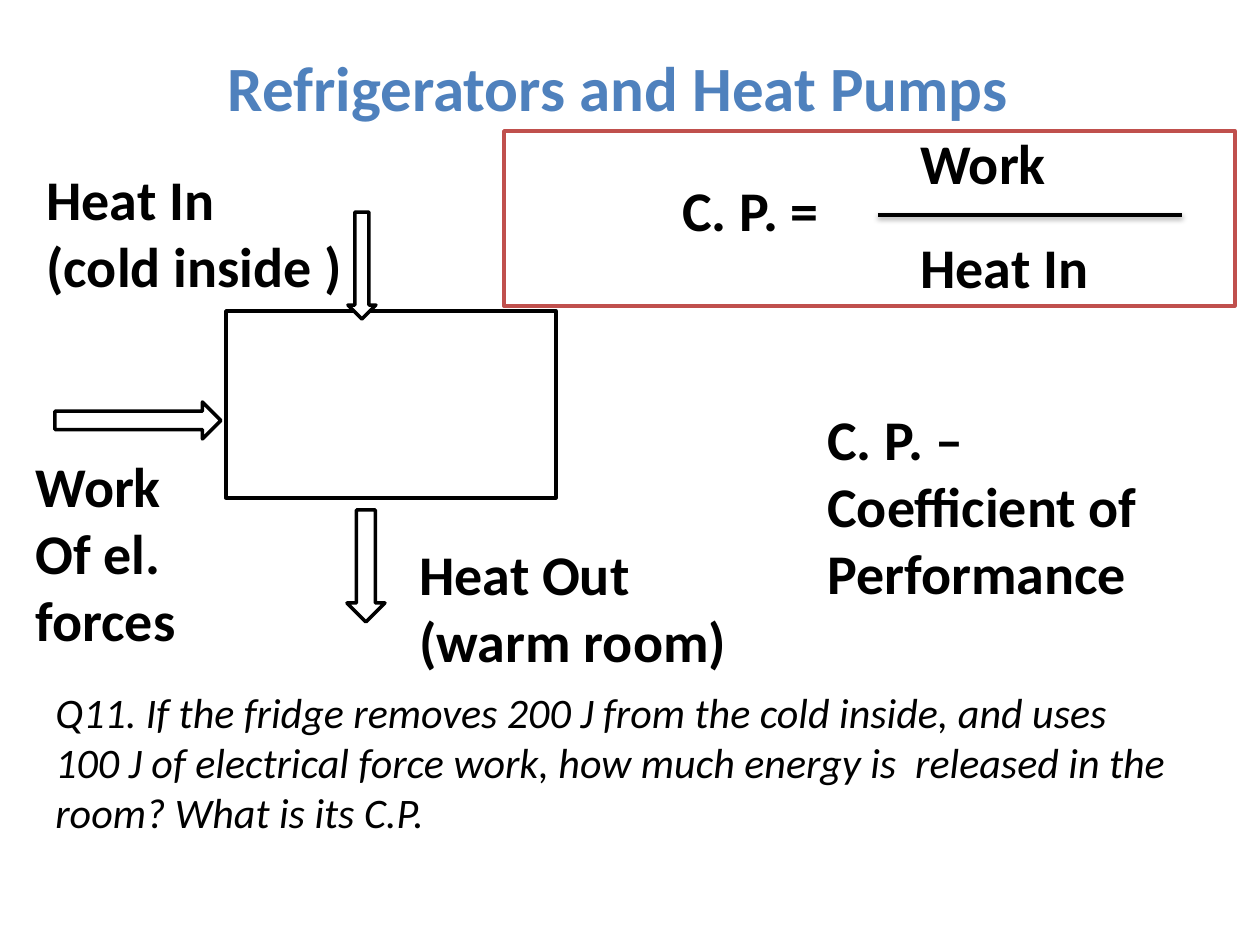
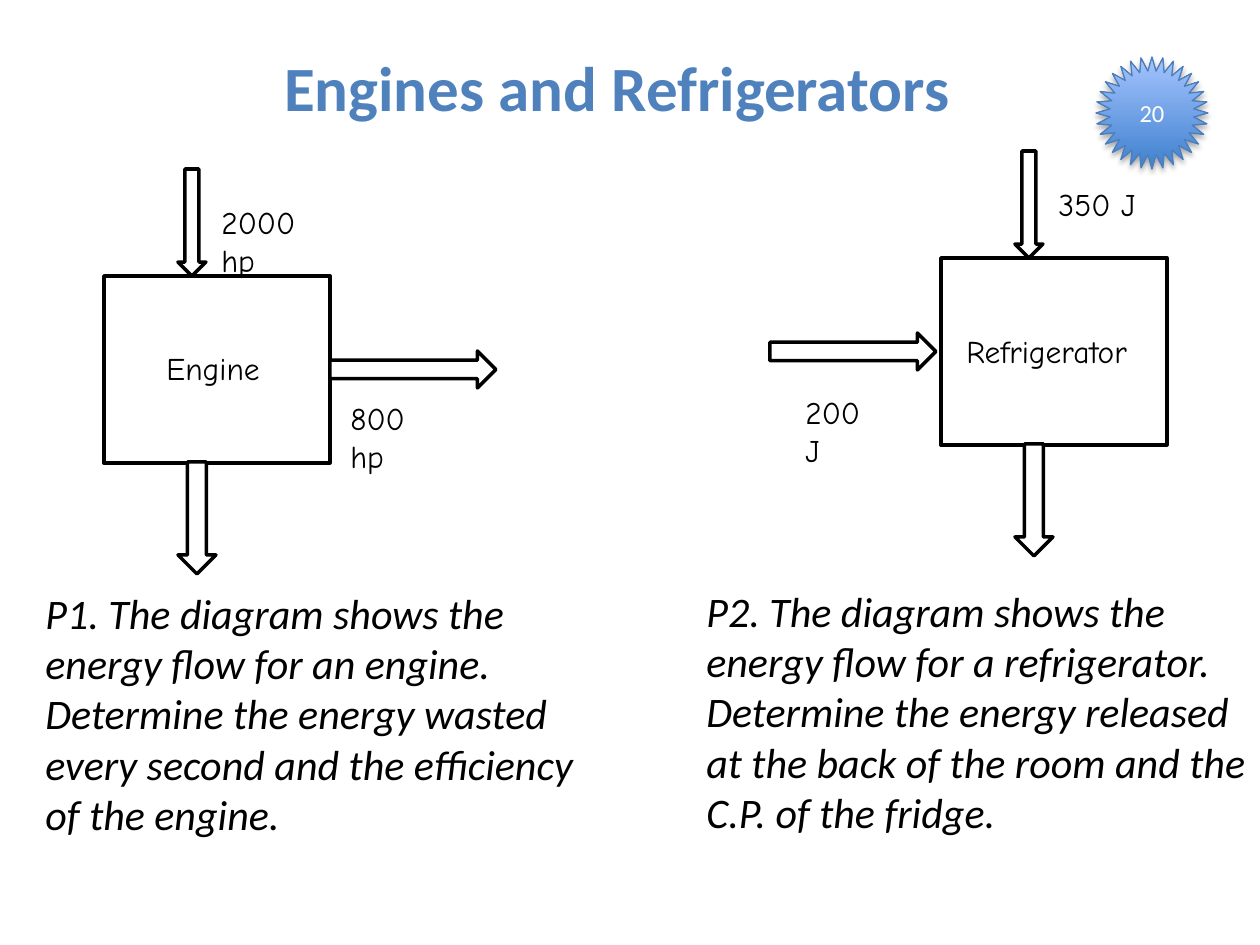
from lxml import etree
from pptx import Presentation
from pptx.dml.color import RGBColor
from pptx.enum.shapes import MSO_CONNECTOR, MSO_SHAPE
from pptx.enum.text import MSO_ANCHOR, MSO_AUTO_SIZE, PP_ALIGN
from pptx.oxml.ns import qn
from pptx.util import Emu, Pt

RECTANGLE = MSO_SHAPE.RECTANGLE
DOWN_ARROW = MSO_SHAPE.DOWN_ARROW
RIGHT_ARROW = MSO_SHAPE.RIGHT_ARROW
STAR = MSO_SHAPE.STAR_32_POINT
STRAIGHT = MSO_CONNECTOR.STRAIGHT
TOP, MIDDLE = MSO_ANCHOR.TOP, MSO_ANCHOR.MIDDLE
LEFT, CENTER = PP_ALIGN.LEFT, PP_ALIGN.CENTER
NO_AUTOFIT = MSO_AUTO_SIZE.NONE

# Shared scale, colours and fonts
EMU_PER_PX = 914400 / 126
SLIDE_W, SLIDE_H = 1260, 945
BLACK, WHITE = "000000", "FFFFFF"
TITLE_BLUE, FORMULA_RED = "4F81BD", "C0504D"
STAR_DARK, STAR_LIGHT, STAR_EDGE = "3F80CE", "A4C4FF", "4B7EBC"
BODY_FONT, DIAGRAM_FONT = "Calibri", "Comic Neue"

# Sizes of the parts of every energy-flow diagram
BOX_H = 187
HEAT_IN_SIZE, HEAT_OUT_SIZE, WORK_SIZE = (28, 107), (38, 112), (166, 37)


def px(*lengths):
    return [Emu(round(length * EMU_PER_PX)) for length in lengths]


def color(hex_string):
    return RGBColor.from_string(hex_string)


def write(frame, lines, size, font=BODY_FONT, ink=BLACK, bold=False,
          italic=False, align=LEFT, anchor=TOP, wrap=True):
    frame.word_wrap = wrap
    frame.auto_size = NO_AUTOFIT
    frame.vertical_anchor = anchor
    frame.text = lines
    for paragraph in frame.paragraphs:
        paragraph.alignment = align
        paragraph.font.name = font
        paragraph.font.size = Pt(size)
        paragraph.font.bold = bold
        paragraph.font.italic = italic
        paragraph.font.color.rgb = color(ink)


def add_text(slide, box, lines, size, **style):
    write(slide.shapes.add_textbox(*px(*box)).text_frame, lines, size, **style)


def add_label(slide, box, lines):
    add_text(slide, box, lines, 32, bold=True)


def add_question(slide, box, question):
    add_text(slide, box, question, 24, italic=True)


def add_diagram_text(slide, box, caption):
    add_text(slide, box, caption, 18, font=DIAGRAM_FONT)


def add_outlined(slide, preset, box, fill=WHITE, line=BLACK, width=2):
    shape = slide.shapes.add_shape(preset, *px(*box))
    shape.shadow.inherit = False
    if fill:
        shape.fill.solid()
        shape.fill.fore_color.rgb = color(fill)
    else:
        shape.fill.background()
    shape.line.color.rgb = color(line)
    shape.line.width = Pt(width)
    return shape


def add_drop_shadow(shape, opacity, distance):
    properties = shape._element.spPr
    effects = properties.find(qn("a:effectLst"))
    if effects is None:
        effects = etree.SubElement(properties, qn("a:effectLst"))
    shadow = etree.SubElement(
        effects, qn("a:outerShdw"), blurRad=str(Pt(3.1)),
        dist=str(Pt(distance)), dir="5400000", rotWithShape="0")
    ink = etree.SubElement(shadow, qn("a:srgbClr"), val=BLACK)
    etree.SubElement(ink, qn("a:alpha"), val=str(opacity * 1000))


def add_fraction_bar(slide, left, right, y):
    bar = slide.shapes.add_connector(STRAIGHT, *px(left, y, right, y))
    bar.line.color.rgb = color(BLACK)
    bar.line.width = Pt(2)
    add_drop_shadow(bar, 38, 1.6)


def add_energy_flow(slide, x, y, width, heat_in, work, heat_out):
    """Draw the machine at x, y; the arrows are placed relative to it."""
    add_outlined(slide, RECTANGLE, (x, y, width, BOX_H))
    for preset, (dx, dy), size in ((DOWN_ARROW, heat_in, HEAT_IN_SIZE),
                                   (RIGHT_ARROW, work, WORK_SIZE),
                                   (DOWN_ARROW, heat_out, HEAT_OUT_SIZE)):
        add_outlined(slide, preset, (x + dx, y + dy, *size))


def add_number_star(slide, box, number):
    star = add_outlined(slide, STAR, box, line=STAR_EDGE, width=0.75)
    star.fill.gradient()
    star.fill.gradient_angle = 90
    for stop, shade in zip(star.fill.gradient_stops, (STAR_DARK, STAR_LIGHT)):
        stop.color.rgb = color(shade)
    add_drop_shadow(star, 35, 1.8)
    write(star.text_frame, number, 14, ink=WHITE, align=CENTER, anchor=MIDDLE)


def add_titled_slide(deck, heading, left, width):
    slide = deck.slides.add_slide(deck.slide_layouts.get_by_name("Title Only"))
    title = slide.shapes.title
    title.left, title.top, title.width, title.height = px(left, 42, width, 89)
    write(title.text_frame, heading, 36, ink=TITLE_BLUE, bold=True,
          align=CENTER, wrap=False)
    return slide


def build_heat_pumps(deck):
    slide = add_titled_slide(deck, "Refrigerators and Heat Pumps", 211, 814)

    # Energy flow through the fridge
    add_energy_flow(slide, 226, 311, 330, heat_in=(122, -99),
                    work=(-171, 91), heat_out=(121, 199))
    add_label(slide, (34, 158, 349, 149), "Heat In\n(cold inside )")
    add_label(slide, (407, 533, 354, 149), "Heat Out\n(warm room)")
    add_label(slide, (23, 445, 209, 217), "Work\nOf el. forces")

    # Coefficient of performance
    add_label(slide, (670, 169, 353, 81), "C. P. =")
    add_label(slide, (908, 226, 231, 81), "Heat In")
    add_fraction_bar(slide, 878, 1182, 215)
    add_label(slide, (908, 122, 192, 81), "Work")
    add_outlined(slide, RECTANGLE, (504, 131, 731, 175),
                 fill=None, line=FORMULA_RED)

    add_question(slide, (43, 680, 1149, 165),
                 "Q11. If the fridge removes 200 J from the cold inside, and "
                 "uses 100 J of electrical force work, how much energy is  "
                 "released in the room? What is its C.P.")
    add_label(slide, (815, 398, 353, 217),
              "C. P. – Coefficient of Performance")


def build_engines(deck):
    slide = add_titled_slide(deck, "Engines and Refrigerators", 268, 698)
    add_number_star(slide, (1096, 57, 112, 112), "20")
    heat_arrows = {"heat_in": (74, -107), "heat_out": (74, 186)}

    # Engine
    add_energy_flow(slide, 104, 276, 226, work=(226, 75), **heat_arrows)
    add_diagram_text(slide, (154, 343, 125, 50), "Engine")
    add_diagram_text(slide, (209, 197, 136, 50), "2000 hp")
    add_diagram_text(slide, (338, 393, 116, 50), "800 hp")
    add_question(slide, (33, 581, 586, 267),
                 "P1. The diagram shows the energy flow for an engine. "
                 "Determine the energy wasted every second and the "
                 "efficiency of the engine.")

    # Refrigerator
    add_energy_flow(slide, 941, 258, 226, work=(-171, 75), **heat_arrows)
    add_diagram_text(slide, (954, 326, 196, 50), "Refrigerator")
    add_diagram_text(slide, (1046, 179, 110, 50), "350 J")
    add_diagram_text(slide, (793, 387, 98, 50), "200 J")
    add_question(slide, (694, 579, 566, 267),
                 "P2. The diagram shows the energy flow for a refrigerator. "
                 "Determine the energy released at the back of the room and "
                 "the C.P. of the fridge.")


def main():
    deck = Presentation()
    deck.slide_width, deck.slide_height = px(SLIDE_W, SLIDE_H)
    build_heat_pumps(deck)
    build_engines(deck)
    deck.save("out.pptx")


if __name__ == "__main__":
    main()
